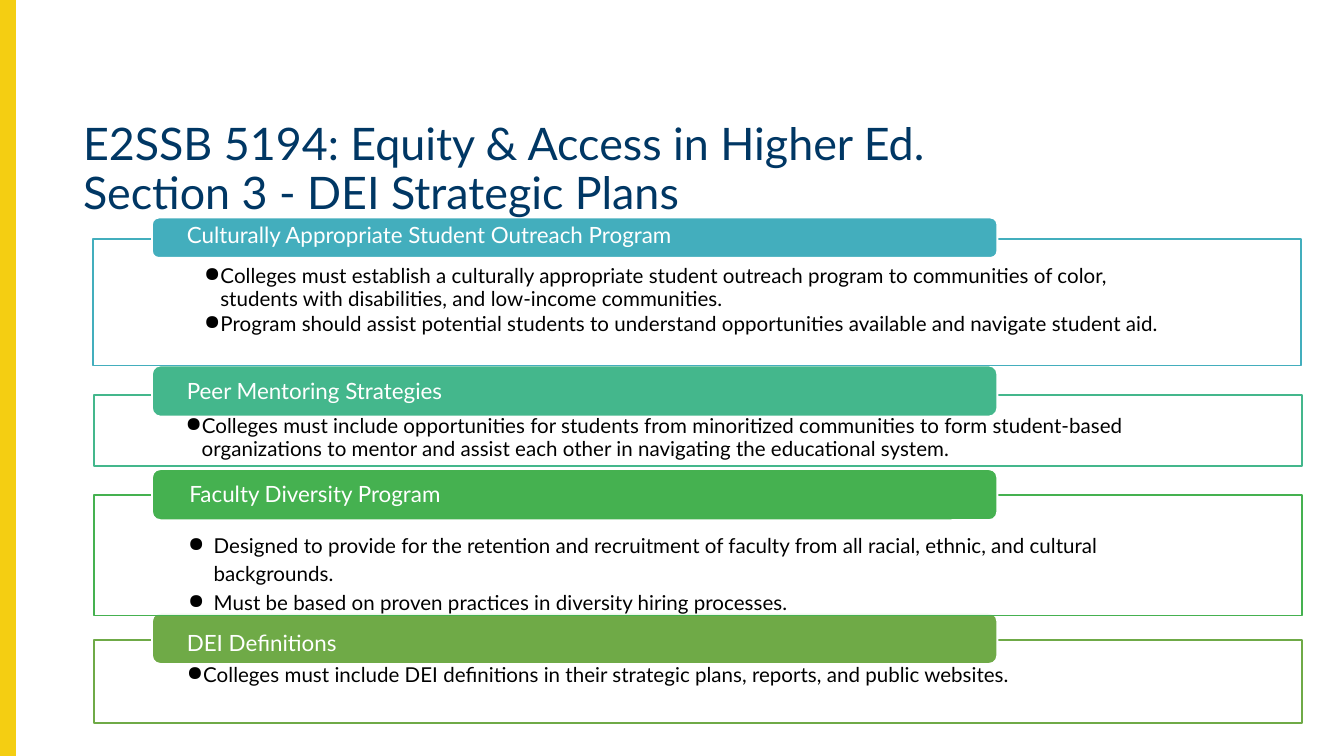
from lxml import etree
from pptx import Presentation
from pptx.dml.color import RGBColor
from pptx.enum import shapes, text
from pptx.oxml import ns
from pptx.util import Pt

COLOURS = {
    "white": "FFFFFF", "black": "000000", "navy": "003764", "yellow": "F4CE12",
    "olive": "6FAA47", "green": "45B150", "mint": "44B78C", "teal": "43AEBD",
}
FONT = "Lato"


def add_block(page, kind, place, fill, line):
    block = page.shapes.add_shape(kind, *map(Pt, place))
    block.shadow.inherit = False
    block.fill.solid()
    block.fill.fore_color.rgb = RGBColor.from_string(COLOURS[fill])
    block.line.color.rgb = RGBColor.from_string(COLOURS[line])
    block.line.width = Pt(1)
    return block


def add_text(page, place, lines, size, colour, insets, anchor, formats):
    """Add a text box with one paragraph per line and return its paragraphs."""
    frame = page.shapes.add_textbox(*map(Pt, place)).text_frame
    frame.word_wrap = True
    frame.vertical_anchor = anchor
    for side, inset in zip(("left", "top", "right", "bottom"), insets):
        setattr(frame, f"margin_{side}", Pt(inset))
    frame.text = "\n".join(lines)
    for para in frame.paragraphs:
        for name, value in formats.items():
            setattr(para, name, value)
        for span in para.runs:
            span.font.name = FONT
            span.font.size = Pt(size)
            span.font.color.rgb = RGBColor.from_string(COLOURS[colour])
    return frame.paragraphs


deck = Presentation()
deck.slide_width, deck.slide_height = Pt(720), Pt(405)
page = deck.slides.add_slide(deck.slide_layouts[6])

add_block(page, shapes.MSO_SHAPE.RECTANGLE, (0, 0, 7.9, 405), "yellow", "yellow")

# Listed from back to front, which is from the bottom of the page upwards
sections = [
    {"heading": "DEI Definitions", "colour": "olive",
     "frame": (50.4, 342.7, 647.3, 44.6), "body": (49.7, 342.7, 576.7, 38.2),
     "bar": (328.3, 27.4), "label": (82.8, 332.6), "indent": 8.64, "spacing": 0.9,
     "before": [0],
     "bullets": ["Colleges must include DEI definitions in their strategic plans, "
                 "reports, and public websites."]},
    {"heading": "Faculty Diversity Program", "colour": "green",
     "frame": (50.4, 265, 647.3, 64.8), "body": (50.4, 262.1, 634.3, 67.7),
     "bar": (251.3, 27.4), "label": (84.2, 252.7), "indent": 13.68, "spacing": 1.15,
     "before": [2, 0],
     "bullets": ["Designed to provide for the retention and recruitment of faculty "
                 "from all racial, ethnic, and cultural backgrounds.",
                 "Must be based on proven practices in diversity hiring processes."]},
    {"heading": "Peer Mentoring Strategies", "colour": "mint",
     "frame": (50.4, 211.7, 647.3, 38.2), "body": (49, 203.8, 620.6, 42.5),
     "bar": (195.8, 27.4), "label": (82.8, 197.3), "indent": 8.64, "spacing": 0.9,
     "before": [0],
     "bullets": ["Colleges must include opportunities for students from minoritized "
                 "communities to form student-based organizations to mentor and "
                 "assist each other in navigating the educational system."]},
    {"heading": "Culturally Appropriate Student Outreach Program", "colour": "teal",
     "frame": (49.7, 128.2, 647.3, 67.7), "body": (59, 121, 628.6, 59.8),
     "bar": (116.6, 21.6), "label": (82.8, 113.8), "indent": 8.64, "spacing": 0.9,
     "before": [0, 1.9],
     "bullets": ["Colleges must establish a culturally appropriate student outreach "
                 "program to communities of color, students with disabilities, and "
                 "low-income communities.",
                 "Program should assist potential students to understand "
                 "opportunities available and navigate student aid."]},
]

for section in sections:
    colour = section["colour"]
    panel = add_block(page, shapes.MSO_SHAPE.RECTANGLE, section["frame"], "white", colour)
    fill_colour = panel.fill._xPr.find(ns.qn("a:solidFill"))[0]
    etree.SubElement(fill_colour, ns.qn("a:alpha"), val="89000")

    paras = add_text(page, section["body"], section["bullets"], 11, "black",
                     (50.4, 21.6, 50.4, 7.2), text.MSO_ANCHOR.TOP,
                     {"line_spacing": section["spacing"]})
    for para, before in zip(paras, section["before"]):
        para.space_before = Pt(before)
        properties = para._p.get_or_add_pPr()
        properties.set("marL", str(Pt(section["indent"])))
        properties.set("indent", str(-Pt(section["indent"])))
        bullet_colour = etree.SubElement(properties, ns.qn("a:buClr"))
        etree.SubElement(bullet_colour, ns.qn("a:srgbClr"), val=COLOURS["black"])
        etree.SubElement(properties, ns.qn("a:buChar"), char="●")

    top, height = section["bar"]
    add_block(page, shapes.MSO_SHAPE.ROUNDED_RECTANGLE, (81.4, top, 452.9, height),
              colour, "white")
    add_text(page, (*section["label"], 450, 25.2), [section["heading"]], 12, "white",
             (17.3, 0, 17.3, 0), text.MSO_ANCHOR.MIDDLE, {"line_spacing": 0.9})

add_text(page, (37.4, 61.9, 647.3, 28.8),
         ["E2SSB 5194: Equity & Access in Higher Ed.", "Section 3 - DEI Strategic Plans"],
         24, "navy", (7.2, 3.6, 7.2, 3.6), text.MSO_ANCHOR.TOP, {"line_spacing": 0.9})

deck.save("out.pptx")
